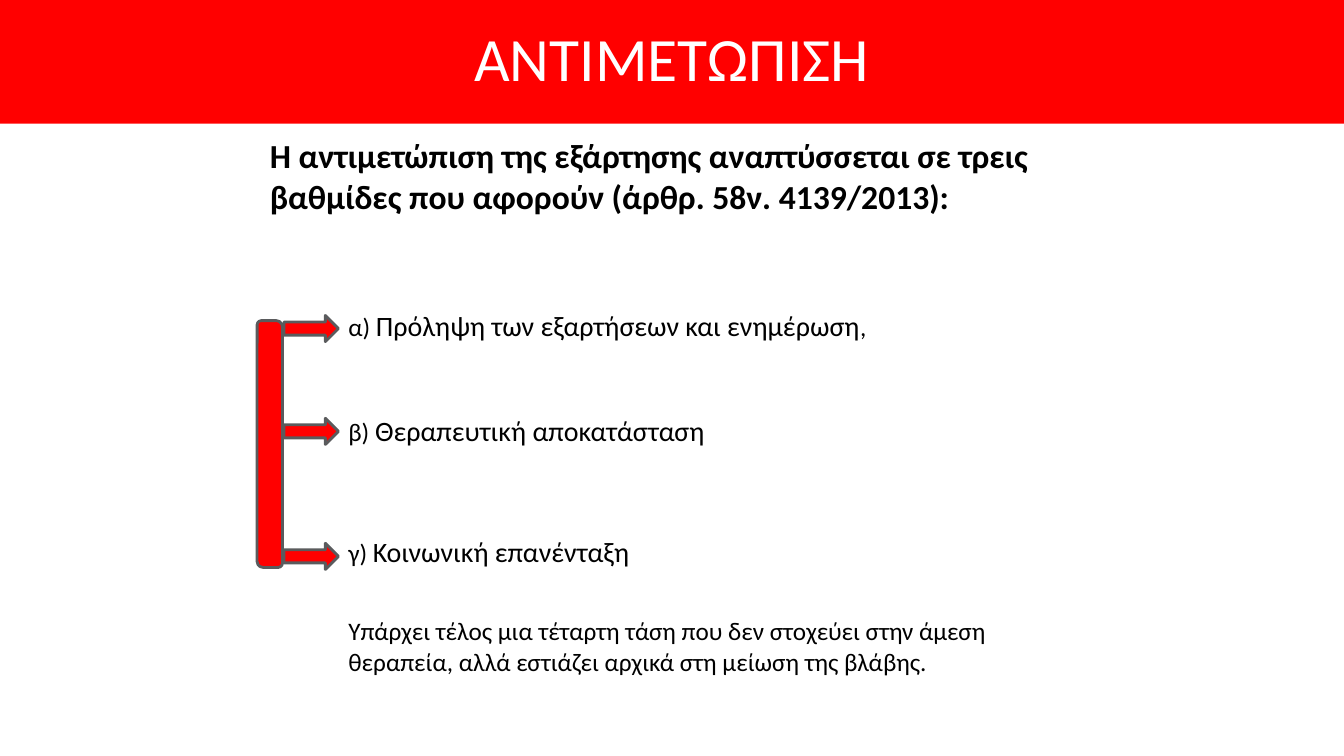
from pptx import Presentation
from pptx.dml.color import RGBColor
from pptx.enum.shapes import MSO_SHAPE
from pptx.enum.text import MSO_ANCHOR, MSO_AUTO_SIZE, PP_ALIGN
from pptx.util import Cm, Pt

RECTANGLE = MSO_SHAPE.RECTANGLE
ROUNDED_BAR = MSO_SHAPE.ROUND_2_DIAG_RECTANGLE
ARROW = MSO_SHAPE.RIGHT_ARROW
MIDDLE = MSO_ANCHOR.MIDDLE
CENTER = PP_ALIGN.CENTER
FIT_SHAPE = MSO_AUTO_SIZE.SHAPE_TO_FIT_TEXT

FONT = "Calibri"
RED, GREY, WHITE, BLACK = "FF0000", "5A5B5D", "FFFFFF", "000000"
SLIDE_WIDTH, SLIDE_HEIGHT = 33.87, 19.05

TITLE = "ΑΝΤΙΜΕΤΩΠΙΣΗ"
INTRO = "Η αντιμετώπιση της εξάρτησης αναπτύσσεται σε τρεις βαθμίδες που αφορούν (άρθρ. 58ν. 4139/2013):"
CLOSING = "Υπάρχει τέλος μια τέταρτη τάση που δεν στοχεύει στην άμεση θεραπεία, αλλά εστιάζει αρχικά στη μείωση της βλάβης."
STAGES = [
    {"runs": [("α) ", 18), ("Πρόληψη των εξαρτήσεων και ενημέρωση", 20), (",", 18)],
     "top": 7.65, "width": 13.82, "wrap": False, "arrow_top": 7.95},
    {"runs": [("β) ", 18), ("Θεραπευτική αποκατάσταση", 20)],
     "top": 10.29, "width": 9.58, "wrap": False, "arrow_top": 10.54},
    {"runs": [("γ) ", 18), ("Κοινωνική επανένταξη", 20)],
     "top": 13.34, "width": 8.46, "wrap": True, "arrow_top": 13.69},
]
STAGE_LEFT, STAGE_HEIGHT = 8.53, 1.12
ARROW_LEFT, ARROW_WIDTH, ARROW_HEIGHT = 7.16, 1.37, 0.66
BAR = (6.48, 8.08, 0.64, 6.22)


def color(hex_code):
    return RGBColor.from_string(hex_code)


def write(para, runs, hex_code=BLACK, bold=False):
    for text, size in runs:
        span = para.add_run()
        span.text = text
        span.font.name = FONT
        span.font.size = Pt(size)
        span.font.bold = bold
        span.font.color.rgb = color(hex_code)


def add_red_shape(page, kind, area, outlined=True):
    shape = page.shapes.add_shape(kind, *map(Cm, area))
    shape.shadow.inherit = False
    shape.fill.solid()
    shape.fill.fore_color.rgb = color(RED)
    if outlined:
        shape.line.color.rgb = color(GREY)
        shape.line.width = Pt(2)
    else:
        shape.line.fill.background()
    return shape


def add_text(page, area, runs, wrap=True, bold=False):
    box = page.shapes.add_textbox(*map(Cm, area))
    box.text_frame.word_wrap = wrap
    box.text_frame.auto_size = FIT_SHAPE
    write(box.text_frame.paragraphs[0], runs, bold=bold)


def main():
    deck = Presentation()
    deck.slide_width, deck.slide_height = Cm(SLIDE_WIDTH), Cm(SLIDE_HEIGHT)
    page = deck.slides.add_slide(deck.slide_layouts[6])

    banner = add_red_shape(page, RECTANGLE, (0, 0, SLIDE_WIDTH, 3.12), outlined=False)
    banner.text_frame.vertical_anchor = MIDDLE
    para = banner.text_frame.paragraphs[0]
    para.alignment = CENTER
    para.line_spacing = 0.9
    write(para, [(TITLE, 44)], WHITE)

    add_text(page, (6.55, 3.28, 19.69, 2.31), [(INTRO, 24)], bold=True)
    for stage in STAGES:
        area = (STAGE_LEFT, stage["top"], stage["width"], STAGE_HEIGHT)
        add_text(page, area, stage["runs"], stage["wrap"])
    add_text(page, (STAGE_LEFT, 15.39, 16.94, 1.8), [(CLOSING, 18)])

    bar = add_red_shape(page, ROUNDED_BAR, BAR)
    bar.adjustments[0], bar.adjustments[1] = 0.17, 0.24
    for stage in STAGES:
        add_red_shape(page, ARROW, (ARROW_LEFT, stage["arrow_top"], ARROW_WIDTH, ARROW_HEIGHT))

    deck.save("out.pptx")


if __name__ == "__main__":
    main()
